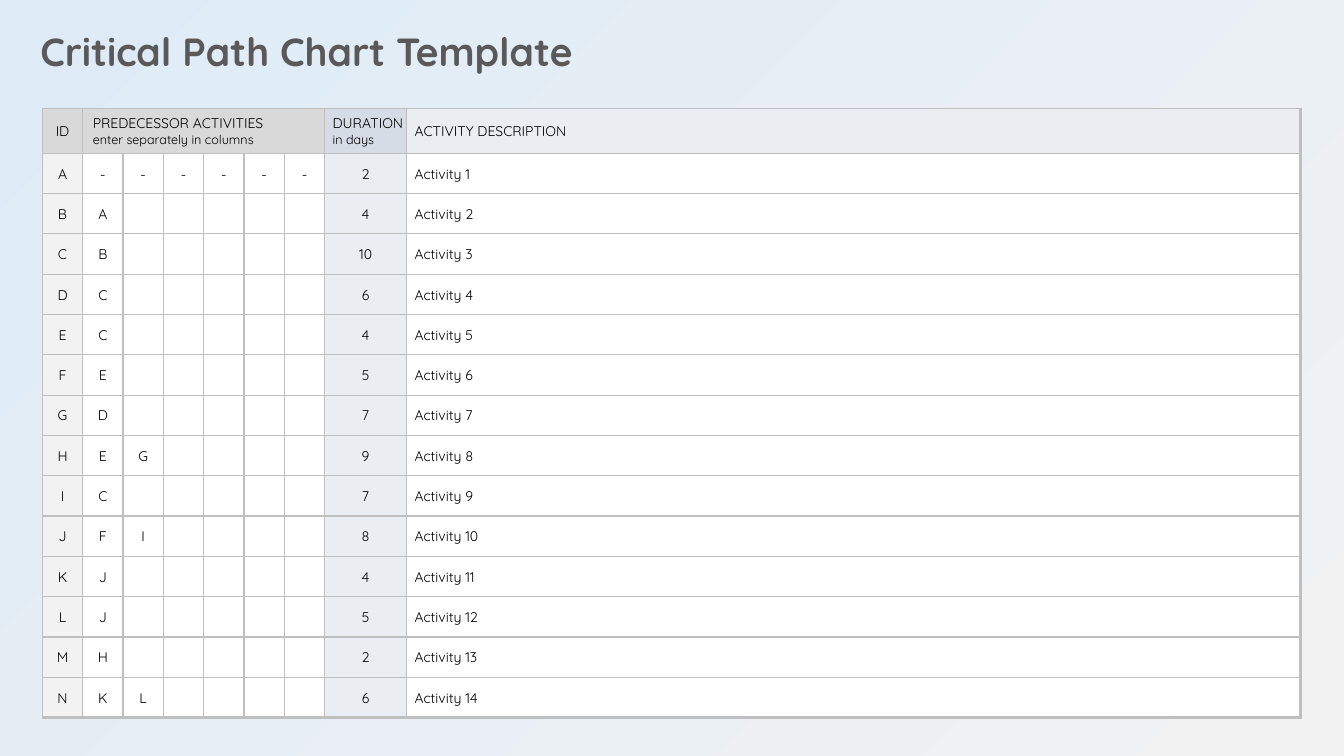
from lxml import etree
from pptx import Presentation
from pptx import util as u
from pptx.dml.color import RGBColor
from pptx.enum import text
from pptx.oxml import ns

WIDTH, HEIGHT = 13.33, 7.5
PREDECESSOR_COLUMNS = 6
GRID_STEP = 0.4
COLUMN_SPANS = [1] * (1 + PREDECESSOR_COLUMNS) + [2.03, 22.17]
HEADER_SPAN = 1.1
PREDECESSORS = ["------", "A", "B", "C", "C", "E", "D", "EG", "C", "FI", "J", "J", "H", "KL"]
DURATIONS = [2, 4, 10, 6, 4, 5, 7, 9, 7, 8, 4, 5, 2, 6]
IDS = "ABCDEFGHIJKLMN"

LEFT, CENTER = text.PP_ALIGN.LEFT, text.PP_ALIGN.CENTER
CENTERED = {"margin_left": 0.01, "margin_top": 0.01, "margin_right": 0.01, "margin_bottom": 0}
INDENTED = {**CENTERED, "margin_left": 0.08}
SPACED = {"margin_left": 0.1, "margin_top": 0.05, "margin_right": 0.1, "margin_bottom": 0.05}


def color(value):
    return RGBColor.from_string(value)


def apply(target, values):
    for name, value in values.items():
        setattr(target, name, value)


def inches(values):
    return {name: u.Inches(value) for name, value in values.items()}


class Board:
    font = "Quicksand"
    ink = "000000"
    rule = "BFBFBF"
    thin, thick = 1, 2.25

    def __init__(self, deck):
        self.slide = deck.slides.add_slide(deck.slide_layouts[6])

    def background(self, start, end, angle, start_alpha):
        fill = self.slide.background.fill
        fill.gradient()
        fill.gradient_angle = angle
        for stop, tint in zip(fill.gradient_stops, (start, end)):
            stop.color.rgb = color(tint)
        first = next(self.slide.element.iter(ns.qn("a:srgbClr")))
        etree.SubElement(first, ns.qn("a:alpha"), val=str(start_alpha * 1000))

    def wording(self, paragraph, lines, align=LEFT, ink=None, bold=False):
        paragraph.alignment = align
        for index, (words, size) in enumerate(lines):
            if index:
                paragraph.add_line_break()
            run = paragraph.add_run()
            run.text = words
            apply(run.font, {"name": self.font, "size": u.Pt(size), "bold": bold})
            run.font.color.rgb = color(ink or self.ink)

    def title(self, words, x, y, w, h):
        box = self.slide.shapes.add_textbox(
            u.Inches(x * WIDTH), u.Inches(y * HEIGHT), u.Inches(w * WIDTH), u.Inches(h * HEIGHT))
        frame = box.text_frame
        apply(frame, {"word_wrap": True, "auto_size": text.MSO_AUTO_SIZE.SHAPE_TO_FIT_TEXT,
                      **inches({**SPACED, "margin_left": 0})})
        self.wording(frame.paragraphs[0], [(words, 28)], ink="595959", bold=True)

    def table(self, x, y, column_spans, row_spans):
        columns = [u.Inches(span * GRID_STEP) for span in column_spans]
        rows = [u.Inches(span * GRID_STEP) for span in row_spans]
        frame = self.slide.shapes.add_table(
            len(rows), len(columns), u.Inches(x * WIDTH), u.Inches(y * HEIGHT),
            sum(columns), sum(rows))
        table = frame.table
        apply(table, {"first_row": False, "horz_banding": False})
        for column, width in zip(table.columns, columns):
            column.width = width
        for row, height in zip(table.rows, rows):
            row.height = height
        return table

    def borders(self, cell, right, bottom):
        properties = cell._tc.get_or_add_tcPr()
        widths = {"lnL": self.thin, "lnR": right, "lnT": self.thin, "lnB": bottom}
        for side, width in widths.items():
            line = etree.SubElement(properties, ns.qn("a:" + side), w=str(u.Pt(width)))
            solid = etree.SubElement(line, ns.qn("a:solidFill"))
            etree.SubElement(solid, ns.qn("a:srgbClr"), val=self.rule)

    def cell(self, table, row, column, lines, fill, align=CENTER, margins=CENTERED):
        cell = table.cell(row, column)
        self.borders(cell,
                     self.thick if column == len(table.columns) - 1 else self.thin,
                     self.thick if row == len(table.rows) - 1 else self.thin)
        cell.fill.solid()
        cell.fill.fore_color.rgb = color(fill)
        apply(cell, {"vertical_anchor": text.MSO_ANCHOR.MIDDLE, **inches(margins)})
        self.wording(cell.text_frame.paragraphs[0], lines, align)


def main():
    deck = Presentation()
    apply(deck, {"slide_width": u.Inches(WIDTH), "slide_height": u.Inches(HEIGHT)})
    board = Board(deck)
    board.background("F2F2F2", "DEEBF7", 135, 40)
    board.title("Critical Path Chart Template", 0.03, 0.03, 0.62, 0.08)

    duration_column = 1 + PREDECESSOR_COLUMNS
    description_column = duration_column + 1
    schedule = board.table(0.42 / WIDTH, 1.08 / HEIGHT, COLUMN_SPANS,
                           [HEADER_SPAN] + [1] * len(IDS))

    board.cell(schedule, 0, 0, [("ID", 10)], "D9D9D9")
    for column in range(1, duration_column):
        heading = [("PREDECESSOR ACTIVITIES", 10), ("enter separately in columns", 9)]
        board.cell(schedule, 0, column, heading if column == 1 else [], "D9D9D9", LEFT, SPACED)
    schedule.cell(0, 1).merge(schedule.cell(0, PREDECESSOR_COLUMNS))
    board.cell(schedule, 0, duration_column, [("DURATION", 10), ("in days", 9)],
               "D6DCE5", LEFT, INDENTED)
    board.cell(schedule, 0, description_column, [("ACTIVITY DESCRIPTION", 10)],
               "EAEEF3", LEFT, INDENTED)

    activities = zip(IDS, PREDECESSORS, DURATIONS)
    for row, (activity, predecessors, days) in enumerate(activities, start=1):
        board.cell(schedule, row, 0, [(activity, 10)], "F2F2F2")
        for column in range(1, duration_column):
            predecessor = predecessors[column - 1:column]
            board.cell(schedule, row, column, [(predecessor, 10)] if predecessor else [], "FFFFFF")
        board.cell(schedule, row, duration_column, [(str(days), 10)], "EAEEF3")
        board.cell(schedule, row, description_column, [(f"Activity {row}", 10)],
                   "FFFFFF", LEFT, INDENTED)

    deck.save("out.pptx")


if __name__ == "__main__":
    main()
